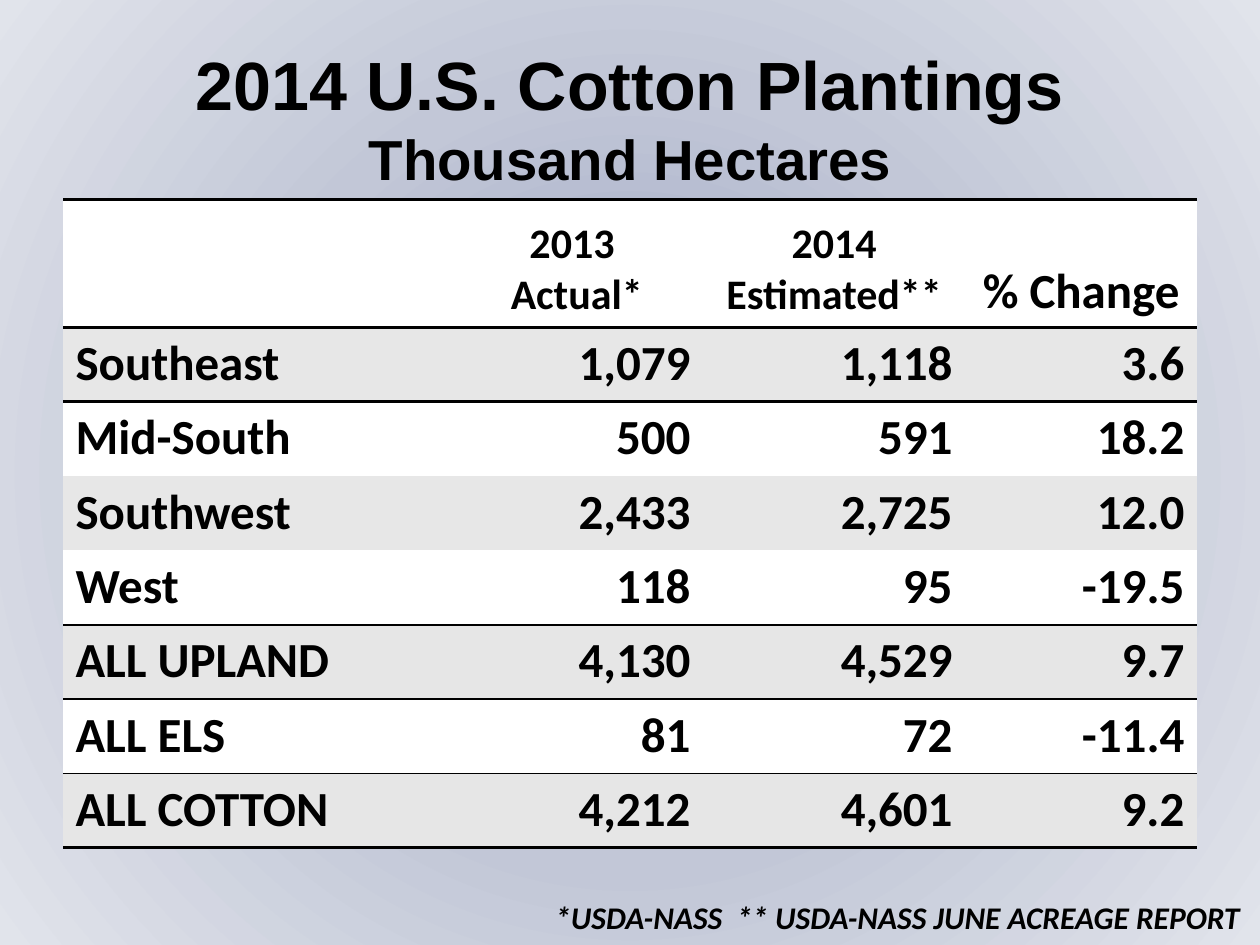
from pptx import Presentation
from pptx.dml.color import RGBColor
from pptx.enum.text import MSO_ANCHOR as Anchor, PP_ALIGN as Align
from pptx.oxml import parse_xml
from pptx.util import Inches, Pt

BLACK = RGBColor(0x00, 0x00, 0x00)
WHITE = RGBColor(0xFF, 0xFF, 0xFF)
GRAY = RGBColor(0xE7, 0xE7, 0xE7)
TOTAL_GRAY = RGBColor(0xE6, 0xE6, 0xE6)
GLOW = [(0, RGBColor(0x98, 0xA3, 0xC1)), (50, RGBColor(0xC2, 0xC7, 0xD7)),
        (100, RGBColor(0xE1, 0xE4, 0xEB))]
NS = 'xmlns:a="http://schemas.openxmlformats.org/drawingml/2006/main"'
NO_STYLE = "{2D5ABB26-0587-4C30-8999-92F81FD0307C}"


def write(frame, *lines, size=28, font="Calibri", italic=False, align=Align.LEFT):
    """Write one paragraph per line; size is one number or one per line."""
    sizes = size if isinstance(size, tuple) else (size,) * len(lines)
    frame.word_wrap = True
    for i, (line, points) in enumerate(zip(lines, sizes)):
        paragraph = frame.add_paragraph() if i else frame.paragraphs[0]
        paragraph.alignment = align
        run = paragraph.add_run()
        run.text = line
        run.font.size = Pt(points)
        run.font.name = font
        run.font.bold = True
        run.font.italic = italic
        run.font.color.rgb = BLACK


def add_borders(cell, top, bottom):
    """Put black rules of the given point widths above and below a cell."""
    properties = cell._tc.get_or_add_tcPr()
    rules = [(tag, width) for tag, width in (("lnT", top), ("lnB", bottom)) if width]
    for i, (tag, width) in enumerate(rules):
        properties.insert(i, parse_xml(
            f'<a:{tag} {NS} w="{Pt(width)}"><a:solidFill><a:srgbClr val="{BLACK}"/>'
            f'</a:solidFill></a:{tag}>'))


prs = Presentation()
prs.slide_width, prs.slide_height = Inches(10), Inches(7.5)
slide = prs.slides.add_slide(prs.slide_layouts[6])

# Background: circular glow from the centre
slide.background.fill.solid()
background = slide.element.xpath(".//p:bgPr")[0]
stops = "".join(f'<a:gs pos="{pos * 1000}"><a:srgbClr val="{color}"/></a:gs>'
                for pos, color in GLOW)
background.replace(background[0], parse_xml(
    f'<a:gradFill {NS} rotWithShape="1"><a:gsLst>{stops}</a:gsLst><a:path path="circle">'
    '<a:fillToRect l="50000" t="50000" r="50000" b="50000"/></a:path></a:gradFill>'))

# Title
title = slide.shapes.add_textbox(Inches(0.5), Inches(0.3), Inches(9), Inches(1.25))
title.text_frame.vertical_anchor = Anchor.MIDDLE
write(title.text_frame, "2014 U.S. Cotton Plantings", "Thousand Hectares",
      size=(39, 32.2), font="Arial", align=Align.CENTER)

# Plantings table
plantings = [
    ("Southeast", "1,079", "1,118", "3.6"),
    ("Mid-South", "500", "591", "18.2"),
    ("Southwest", "2,433", "2,725", "12.0"),
    ("West", "118", "95", "-19.5"),
    ("ALL UPLAND", "4,130", "4,529", "9.7"),
    ("ALL ELS", "81", "72", "-11.4"),
    ("ALL COTTON", "4,212", "4,601", "9.2"),
]
table_frame = slide.shapes.add_table(len(plantings) + 1, 4, Inches(0.5), Inches(1.58),
                                     Inches(9), Inches(5.15))
table_frame._element.xpath(".//a:tableStyleId")[0].text = NO_STYLE
table = table_frame.table
for column, width in zip(table.columns, (3, 2.08, 2.08, 1.84)):
    column.width = Inches(width)
for i, row in enumerate(table.rows):
    row.height = Inches(0.59 if i else 1.02)

# Header row
headers = [((), 24), (("2013", " Actual*"), 24), (("2014 Estimated**",), 24),
           (("% Change",), 28)]
for cell, (lines, size) in zip(table.rows[0].cells, headers):
    cell.vertical_anchor = Anchor.BOTTOM
    cell.fill.solid()
    cell.fill.fore_color.rgb = WHITE
    write(cell.text_frame, *lines, size=size, align=Align.CENTER)
    add_borders(cell, 2, 2)

# Body rows: alternating fill, rules around the totals
rules = {"Southeast": (2, 0), "West": (0, 1), "ALL UPLAND": (1, 0),
         "ALL ELS": (0, 1), "ALL COTTON": (1, 2)}
for r, values in enumerate(plantings, start=1):
    region = values[0]
    shade = TOTAL_GRAY if region.startswith("ALL") else GRAY
    for c, value in enumerate(values):
        cell = table.cell(r, c)
        cell.fill.solid()
        cell.fill.fore_color.rgb = shade if r % 2 else WHITE
        write(cell.text_frame, value, align=Align.RIGHT if c else Align.LEFT)
        add_borders(cell, *rules.get(region, (0, 0)))

# Sources
sources = slide.shapes.add_textbox(Inches(2.5), Inches(7.08), Inches(7.44), Inches(0.4))
write(sources.text_frame, "*USDA-NASS  ** USDA-NASS JUNE ACREAGE REPORT",
      size=18, italic=True, align=Align.RIGHT)

prs.save("out.pptx")
